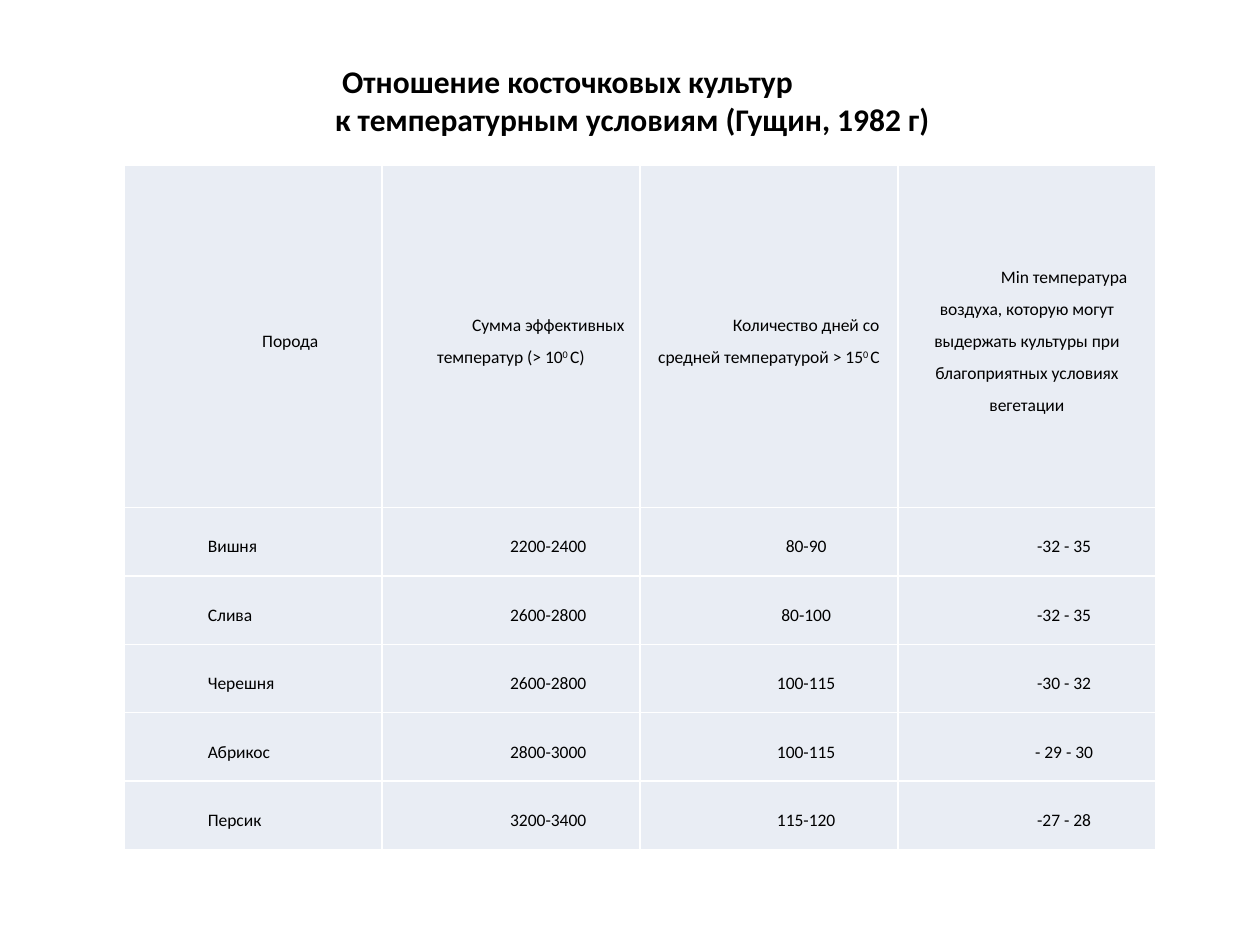
from lxml import etree
from pptx import Presentation
from pptx import util as u
from pptx.dml.color import RGBColor
from pptx.enum import text
from pptx.oxml import parse_xml
from pptx.oxml.ns import nsdecls

BLACK = RGBColor(0x00, 0x00, 0x00)
WHITE = RGBColor(0xFF, 0xFF, 0xFF)
PALE_BLUE = RGBColor(0xE9, 0xED, 0xF4)
FONT = "Calibri"

ROWS = [
    ["Порода", "Сумма эффективных температур (> 10^0 ^С)",
     "Количество дней со средней температурой > 15^0 ^C",
     "Min температура воздуха, которую могут выдержать культуры "
     "при благоприятных условиях вегетации"],
    ["Вишня", "2200-2400", "80-90", "-32 - 35"],
    ["Слива", "2600-2800", "80-100", "-32 - 35"],
    ["Черешня", "2600-2800", "100-115", "-30 - 32"],
    ["Абрикос", "2800-3000", "100-115", "- 29 - 30"],
    ["Персик", "3200-3400", "115-120", "-27 - 28"],
]


def write(frame, content, size, bold=False, align=text.PP_ALIGN.LEFT,
          spacing=1.0, indent=None):
    """Fill a text frame: lines become paragraphs, ^marks^ enclose superscript."""
    for number, line in enumerate(content.split("\n")):
        paragraph = frame.add_paragraph() if number else frame.paragraphs[0]
        paragraph.alignment = align
        paragraph.line_spacing = spacing
        if indent is not None:
            properties = paragraph._p.get_or_add_pPr()
            properties.set("marL", "0")
            properties.set("indent", str(int(indent)))
        for part, piece in enumerate(line.split("^")):
            run = paragraph.add_run()
            run.text = piece
            run.font.name = FONT
            run.font.size = u.Pt(size)
            run.font.bold = bold
            run.font.color.rgb = BLACK
            if part % 2:
                run._r.get_or_add_rPr().set("baseline", "30000")


def add_borders(cell, color, width):
    properties = cell._tc.get_or_add_tcPr()
    for side in ("lnL", "lnR", "lnT", "lnB"):
        properties.append(parse_xml(
            f'<a:{side} {nsdecls("a")} w="{int(width)}"><a:solidFill>'
            f'<a:srgbClr val="{color}"/></a:solidFill></a:{side}>'))


presentation = Presentation()
presentation.slide_width = u.Cm(25.4)
presentation.slide_height = u.Cm(19.05)
slide = presentation.slides.add_slide(presentation.slide_layouts[5])

# Title
title = slide.shapes.title
title.left, title.top = u.Cm(6.5), u.Cm(1.12)
title.width, title.height = u.Cm(12.7), u.Cm(1.8)
title.text_frame.word_wrap = True
title.text_frame.auto_size = text.MSO_AUTO_SIZE.SHAPE_TO_FIT_TEXT
title.text_frame.vertical_anchor = text.MSO_ANCHOR.TOP
write(title.text_frame,
      " Отношение косточковых культур\n"
      "к температурным условиям (Гущин, 1982 г)", size=18, bold=True)

# Table
table = slide.shapes.add_table(len(ROWS), len(ROWS[0]), u.Cm(2.5), u.Cm(3.33),
                               u.Cm(20.8), u.Cm(13.8)).table
table.first_row = False
table.horz_banding = False
for column in table.columns:
    column.width = u.Cm(5.2)

for row_number, values in enumerate(ROWS):
    table.rows[row_number].height = u.Cm(1.38 if row_number else 6.9)
    for column_number, value in enumerate(values):
        cell = table.cell(row_number, column_number)
        cell.margin_left = cell.margin_right = u.Cm(0.19)
        cell.margin_top = cell.margin_bottom = 0
        cell.vertical_anchor = text.MSO_ANCHOR.MIDDLE
        add_borders(cell, WHITE, u.Pt(1))
        cell.fill.solid()
        cell.fill.fore_color.rgb = PALE_BLUE
        is_crop_name = row_number > 0 and column_number == 0
        align = text.PP_ALIGN.JUSTIFY if is_crop_name else text.PP_ALIGN.CENTER
        write(cell.text_frame, value, size=10, align=align, spacing=1.5,
              indent=u.Cm(1.5))

presentation.save("out.pptx")
